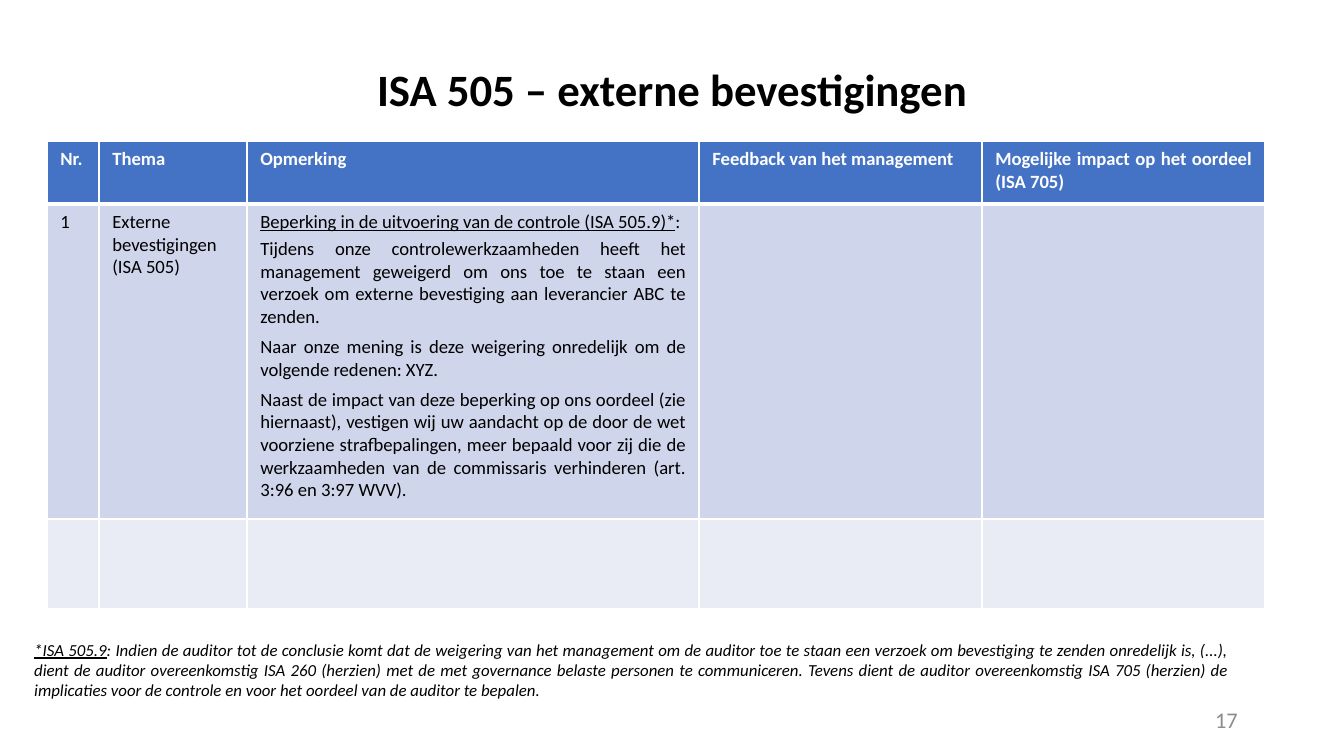
from lxml import etree
from pptx import Presentation
from pptx.dml.color import RGBColor
from pptx.enum.text import MSO_ANCHOR, PP_ALIGN
from pptx.oxml.ns import qn
from pptx.util import Emu, Pt

LEFT, CENTER, RIGHT, JUSTIFY = (PP_ALIGN.LEFT, PP_ALIGN.CENTER,
                                PP_ALIGN.RIGHT, PP_ALIGN.JUSTIFY)
TOP, MIDDLE = MSO_ANCHOR.TOP, MSO_ANCHOR.MIDDLE

FONT = "Calibri"
BLACK, WHITE, GREY = "000000", "FFFFFF", "8C8C8C"
ROW_FILLS = ["4472C4", "CFD5EA", "E9EBF5"]

COLUMNS = [52, 148, 452, 283, 283]
ROWS = [63, 315, 90]
HEADERS = ["Nr.", "Thema", "Opmerking", "Feedback van het management",
           "Mogelijke impact op het oordeel (ISA 705)"]
THEME = ["Externe bevestigingen", "(ISA 505)"]
# Each remark: space before in points, text
REMARKS = [
    (2.4, "Tijdens onze controlewerkzaamheden heeft het management geweigerd "
          "om ons toe te staan een verzoek om externe bevestiging aan "
          "leverancier ABC te zenden."),
    (4, "Naar onze mening is deze weigering onredelijk om de volgende "
        "redenen: XYZ."),
    (4, "Naast de impact van deze beperking op ons oordeel (zie hiernaast), "
        "vestigen wij uw aandacht op de door de wet voorziene "
        "strafbepalingen, meer bepaald voor zij die de werkzaamheden van de "
        "commissaris verhinderen (art. 3:96 en 3:97 WVV)."),
]
FOOTNOTE = (
    ": Indien de auditor tot de conclusie komt dat de weigering van het "
    "management om de auditor toe te staan een verzoek om bevestiging te "
    "zenden onredelijk is, (...), dient de auditor overeenkomstig ISA 260 "
    "(herzien) met de met governance belaste personen te communiceren. Tevens "
    "dient de auditor overeenkomstig ISA 705 (herzien) de implicaties voor de "
    "controle en voor het oordeel van de auditor te bepalen.")


def px(n):
    return Emu(round(n * 914400 / 134.4))


def rgb(value):
    return RGBColor.from_string(value)


def add_run(p, text, size=10, color=BLACK, bold=False, italic=False,
            underline=False):
    r = p.add_run()
    r.text = text
    f = r.font
    f.name, f.size, f.bold, f.italic = FONT, Pt(size), bold, italic
    f.underline = underline
    f.color.rgb = rgb(color)


def add_paragraph(tf, align, before=0):
    p = tf.paragraphs[0]
    if p.runs:
        p = tf.add_paragraph()
    p.alignment = align
    p.space_before = Pt(before)
    return p


def add_text_box(slide, box, align, anchor):
    tf = slide.shapes.add_textbox(*map(px, box)).text_frame
    tf.word_wrap = True
    tf.vertical_anchor = anchor
    return add_paragraph(tf, align)


def style_cell(cell, fill, bottom):
    # Borders come before the fill in the cell properties
    tc_pr = cell._tc.get_or_add_tcPr()
    for side, width in zip("LRTB", (1, 1, 1, bottom)):
        ln = etree.SubElement(tc_pr, qn(f"a:ln{side}"), w=str(Pt(width)))
        solid = etree.SubElement(ln, qn("a:solidFill"))
        etree.SubElement(solid, qn("a:srgbClr"), val=WHITE)
    cell.fill.solid()
    cell.fill.fore_color.rgb = rgb(fill)


def add_title(slide, box):
    p = add_text_box(slide, box, CENTER, MIDDLE)
    p.line_spacing = 0.9
    add_run(p, "ISA 505 – externe bevestigingen", 24, bold=True)


def add_findings(slide, left, top):
    table = slide.shapes.add_table(
        len(ROWS), len(COLUMNS), px(left), px(top),
        px(sum(COLUMNS)), px(sum(ROWS))).table
    for column, width in zip(table.columns, COLUMNS):
        column.width = px(width)
    for i, (row, height) in enumerate(zip(table.rows, ROWS)):
        row.height = px(height)
        for cell in row.cells:
            style_cell(cell, ROW_FILLS[i], 3 if i == 0 else 1)

    # Header row
    for i, text in enumerate(HEADERS):
        p = add_paragraph(table.cell(0, i).text_frame, JUSTIFY)
        add_run(p, text, color=WHITE, bold=True)

    # Number and theme
    add_run(add_paragraph(table.cell(1, 0).text_frame, LEFT), "1")
    for text in THEME:
        add_run(add_paragraph(table.cell(1, 1).text_frame, JUSTIFY), text)

    # Remark
    tf = table.cell(1, 2).text_frame
    p = add_paragraph(tf, JUSTIFY)
    add_run(p, "Beperking in de uitvoering van de controle (ISA 505.9)*",
            underline=True)
    add_run(p, ":")
    for before, text in REMARKS:
        add_run(add_paragraph(tf, JUSTIFY, before), text)


def add_footnote(slide, box):
    p = add_text_box(slide, box, JUSTIFY, TOP)
    add_run(p, "*ISA 505.9", 9, italic=True, underline=True)
    add_run(p, FOOTNOTE, 9, italic=True)


def add_page_number(slide, box):
    add_run(add_text_box(slide, box, RIGHT, MIDDLE), "17", 12, GREY)


def main():
    prs = Presentation()
    prs.slide_width, prs.slide_height = px(1344), px(756)
    slide = prs.slides.add_slide(prs.slide_layouts[6])
    add_page_number(slide, (949, 700, 302, 40))
    add_findings(slide, 47, 141)
    add_footnote(slide, (21, 633, 1219, 116))
    add_title(slide, (93, 19, 1158, 146))
    prs.save("out.pptx")


if __name__ == "__main__":
    main()
